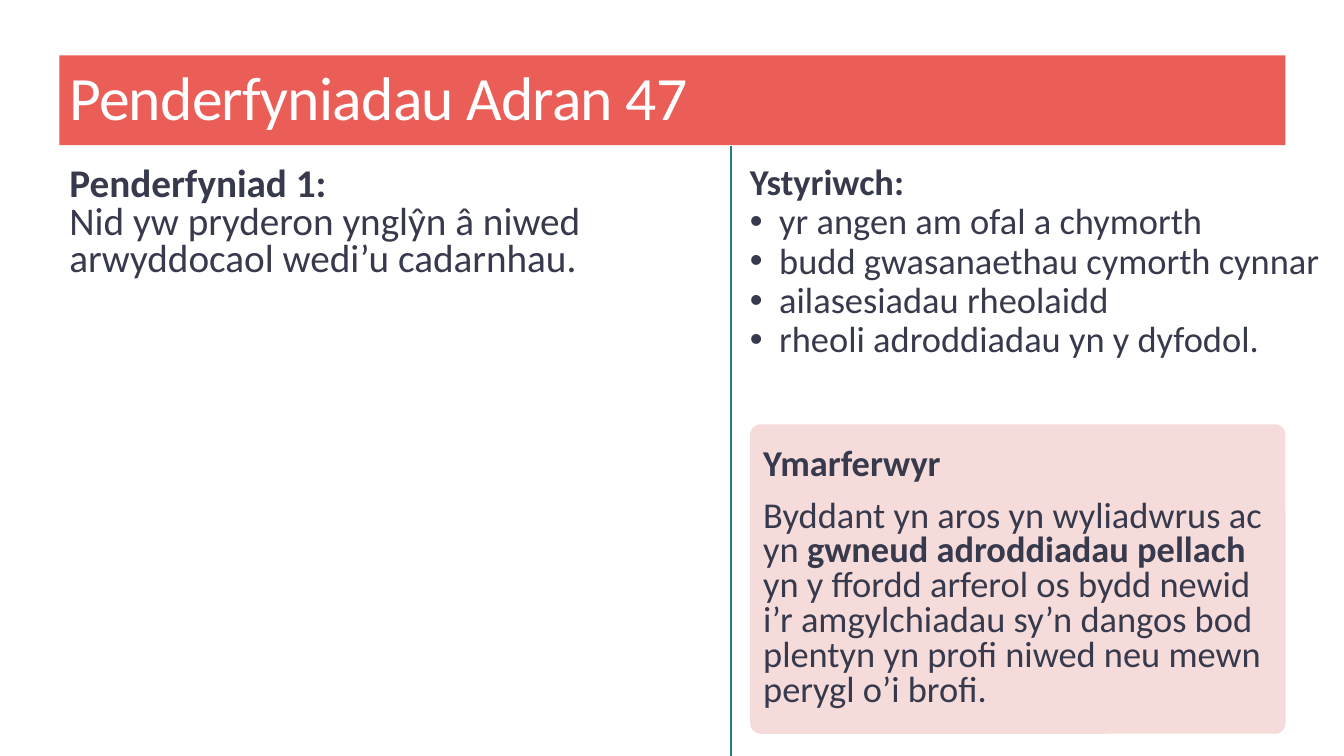
from lxml import etree
from pptx import Presentation
from pptx.dml.color import RGBColor
from pptx.enum import shapes, text
from pptx.oxml import ns
from pptx.util import Inches, Pt

COLOURS = {
    "banner": "EB5E57",
    "card": "F5DBDA",
    "ink": "37394C",
    "white": "FFFFFF",
    "divider": "257D86",
}
FONT = "Calibri"


def colour(name):
    return RGBColor.from_string(COLOURS[name])


def add_bullet(paragraph, indent=0.29):
    properties = paragraph._p.get_or_add_pPr()
    properties.set("marL", str(Inches(indent)))
    properties.set("indent", str(-Inches(indent)))
    etree.SubElement(properties, ns.qn("a:buFont"), typeface="Arial")
    etree.SubElement(properties, ns.qn("a:buChar"), char="•")


def write(frame, runs, size=26, ink="ink", line=0.9, after=0, bullet=False, tracking=None):
    """Add a paragraph of (wording, bold) runs; a vertical tab breaks the line."""
    first = frame.paragraphs[0]
    paragraph = frame.add_paragraph() if first.runs else first
    paragraph.alignment = text.PP_ALIGN.LEFT
    paragraph.line_spacing = line
    paragraph.space_before = Pt(0)
    paragraph.space_after = Pt(after)
    if bullet:
        add_bullet(paragraph)
    for wording, bold in runs:
        for index, piece in enumerate(wording.split("\v")):
            if index:
                paragraph.add_line_break()
            if not piece:
                continue
            run = paragraph.add_run()
            run.text = piece
            run.font.name = FONT
            run.font.size = Pt(size)
            run.font.bold = bold
            run.font.color.rgb = colour(ink)
            if tracking is not None:
                run.font._element.set("spc", str(round(tracking * 100)))


def add_panel(slide, box, preset, fill):
    panel = slide.shapes.add_shape(preset, *map(Inches, box))
    panel.shadow.inherit = False
    panel.fill.solid()
    panel.fill.fore_color.rgb = colour(fill)
    panel.line.fill.background()
    panel.text_frame.word_wrap = True
    panel.text_frame.vertical_anchor = text.MSO_ANCHOR.MIDDLE
    return panel


def add_text_frame(slide, box, margin=0.05):
    frame = slide.shapes.add_textbox(*map(Inches, box)).text_frame
    frame.word_wrap = True
    frame.margin_top = frame.margin_bottom = Inches(margin)
    return frame


def add_banner(slide, box):
    banner = add_panel(slide, box, shapes.MSO_SHAPE.RECTANGLE, "banner")
    write(banner.text_frame, [("Penderfyniadau Adran 47", False)],
          size=44, ink="white", tracking=-0.6)


def add_considerations(slide, box):
    frame = add_text_frame(slide, box)
    write(frame, [("Ystyriwch:", True)])
    for consideration in (
        "yr angen am ofal a chymorth",
        "budd gwasanaethau cymorth cynnar",
        "ailasesiadau rheolaidd",
        "rheoli adroddiadau yn y dyfodol.",
    ):
        write(frame, [(consideration, False)], bullet=True)


def add_practitioner_card(slide, box):
    card = add_panel(slide, box, shapes.MSO_SHAPE.ROUNDED_RECTANGLE, "card")
    card.adjustments[0] = 0.034
    for runs in (
        [("Ymarferwyr", True)],
        [
            ("Byddant yn aros yn wyliadwrus ac yn ", False),
            ("gwneud adroddiadau pellach ", True),
            ("yn y ffordd arferol os bydd newid i’r amgylchiadau sy’n dangos bod "
             "plentyn yn profi niwed neu mewn perygl o’i brofi.", False),
        ],
    ):
        write(card.text_frame, runs, line=0.8, after=12)


def add_decision(slide, box):
    write(add_text_frame(slide, box, margin=0.08), [
        ("Penderfyniad 1:\v", True),
        ("Nid yw pryderon ynglŷn â niwed arwyddocaol wedi’u cadarnhau.", False),
    ], size=28, line=0.8)


def add_divider(slide, x, top, bottom):
    divider = slide.shapes.add_connector(
        shapes.MSO_CONNECTOR.STRAIGHT, *map(Inches, (x, top, x, bottom)))
    divider.line.color.rgb = colour("divider")
    divider.line.width = Pt(0.75)
    etree.SubElement(divider._element.spPr, ns.qn("a:effectLst"))


def main():
    deck = Presentation()
    deck.slide_width, deck.slide_height = Inches(13.33), Inches(7.5)
    slide = deck.slides.add_slide(deck.slide_layouts[6])
    add_banner(slide, (0.59, 0.55, 12.16, 0.89))
    add_considerations(slide, (7.34, 1.58, 5.86, 2.5))
    add_practitioner_card(slide, (7.44, 4.21, 5.31, 3.07))
    add_decision(slide, (0.59, 1.58, 6.48, 1.64))
    add_divider(slide, 7.25, 1.45, 7.5)
    deck.save("out.pptx")


if __name__ == "__main__":
    main()
